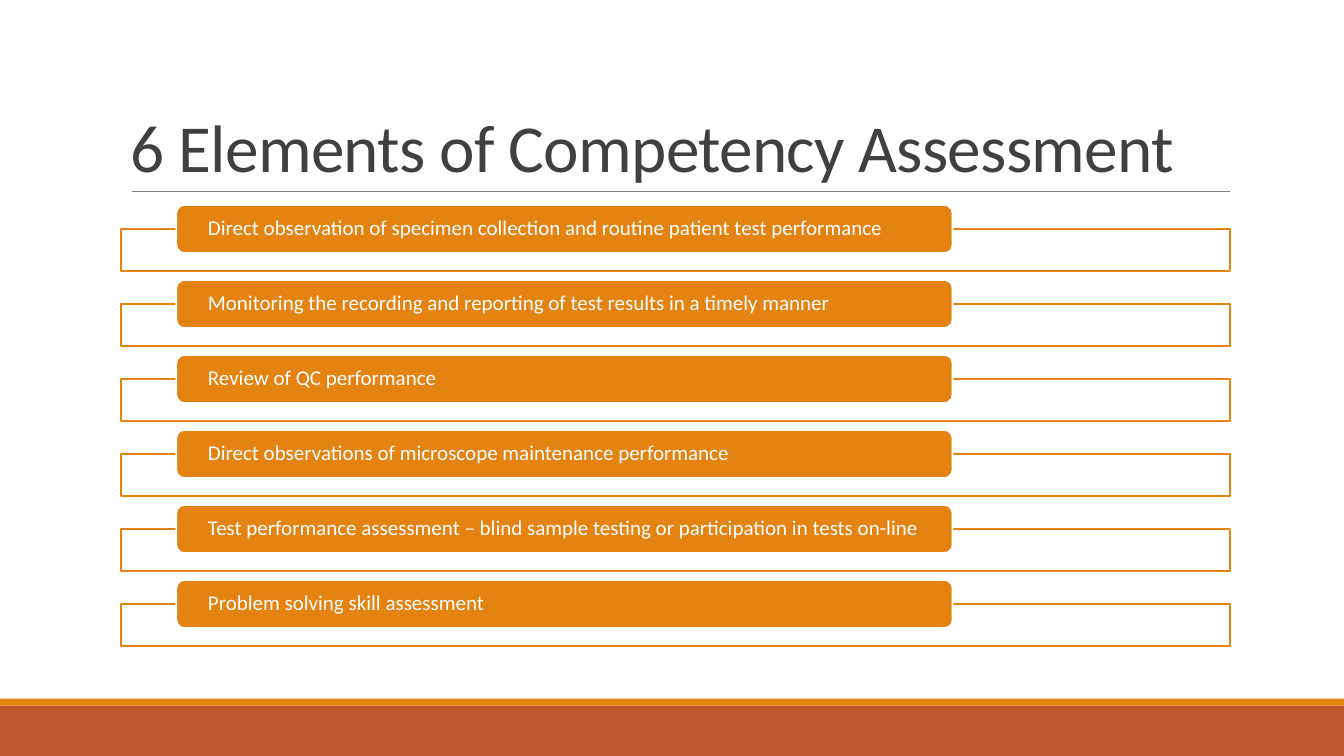
from lxml import etree
from pptx import Presentation
from pptx.dml.color import RGBColor
from pptx.enum.shapes import MSO_CONNECTOR as Connector, MSO_SHAPE as Shape
from pptx.enum.text import MSO_ANCHOR as Anchor, PP_ALIGN as Align
from pptx.oxml.ns import qn
from pptx.util import Pt

COLORS = {
    "orange": "E48312",
    "rust": "BD582C",
    "white": "FFFFFF",
    "title": "404040",
    "rule": "808080",
}
ELEMENTS = [
    "Direct observation of specimen collection and routine patient test performance",
    "Monitoring the recording and reporting of test results in a timely manner",
    "Review of QC performance",
    "Direct observations of microscope maintenance performance",
    "Test performance assessment – blind sample testing or participation in tests on-line",
    "Problem solving skill assessment",
]
SLIDE_WIDTH, SLIDE_HEIGHT = 960, 540
ROW_PITCH = 53.57


def color(name):
    return RGBColor.from_string(COLORS[name])


def add_box(slide, kind, box, fill, line=None):
    shape = slide.shapes.add_shape(kind, *map(Pt, box))
    shape.shadow.inherit = False
    shape.fill.solid()
    shape.fill.fore_color.rgb = color(fill)
    if line:
        shape.line.color.rgb = color(line)
        shape.line.width = Pt(1.25)
    else:
        shape.line.fill.background()
    return shape


def write_text(shape, text, frame_format, paragraph_format, font_format, font_color):
    frame = shape.text_frame
    paragraph = frame.paragraphs[0]
    run = paragraph.add_run()
    run.text = text
    for target, values in ((frame, frame_format), (paragraph, paragraph_format), (run.font, font_format)):
        for name, value in values.items():
            setattr(target, name, value)
    run.font.color.rgb = color(font_color)
    return run


def add_footer(slide, box):
    left, top, width, height = box
    stripe = 5
    add_box(slide, Shape.RECTANGLE, (left, top + stripe, width, height - stripe), "rust")
    add_box(slide, Shape.RECTANGLE, (left, top, width, stripe), "orange")


def add_title(slide, box, text):
    left, top, width, height = box
    # Rule under the title
    bottom = Pt(top + height)
    rule = slide.shapes.add_connector(
        Connector.STRAIGHT, Pt(left + 7.9), bottom, Pt(left + width + 0.4), bottom)
    rule.line.color.rgb = color("rule")
    rule.line.width = Pt(0.5)
    etree.SubElement(rule._element.spPr, qn("a:effectLst"))
    # Title text
    title = slide.shapes.add_textbox(*map(Pt, box))
    run = write_text(
        title, text,
        {"word_wrap": True, "vertical_anchor": Anchor.BOTTOM},
        {"line_spacing": 0.85},
        {"name": "Calibri", "size": Pt(48)}, "title")
    run._r.get_or_add_rPr().set("spc", "-50")


def add_element_row(slide, box, text):
    left, top, width, height = box
    label_height = 34.4
    middle = label_height / 2
    # Outlined bar that starts at the middle of the label
    add_box(slide, Shape.RECTANGLE, (left, top + middle, width, height - middle), "white", "orange")
    # Label
    label = add_box(
        slide, Shape.ROUNDED_RECTANGLE,
        (left + width * 0.05, top, width * 0.7, label_height), "orange", "white")
    write_text(
        label, text,
        {"word_wrap": True, "vertical_anchor": Anchor.MIDDLE,
         "margin_left": Pt(20.9), "margin_right": Pt(20.9), "margin_top": 0, "margin_bottom": 0},
        {"line_spacing": 0.9, "alignment": Align.LEFT},
        {"name": "Calibri", "size": Pt(15)}, "white")


def add_elements(slide, box, texts):
    left, top, width, row_height = box
    for index, text in enumerate(texts):
        add_element_row(slide, (left, top + index * ROW_PITCH, width, row_height), text)


def main():
    presentation = Presentation()
    presentation.slide_width = Pt(SLIDE_WIDTH)
    presentation.slide_height = Pt(SLIDE_HEIGHT)
    slide = presentation.slides.add_slide(presentation.slide_layouts[6])
    add_footer(slide, (0, 499, SLIDE_WIDTH, SLIDE_HEIGHT - 499))
    add_title(slide, (86.4, 22.6, 792, 114.2), "6 Elements of Competency Assessment")
    add_elements(slide, (86.4, 146.4, 792, 47), ELEMENTS)
    presentation.save("out.pptx")


if __name__ == "__main__":
    main()
